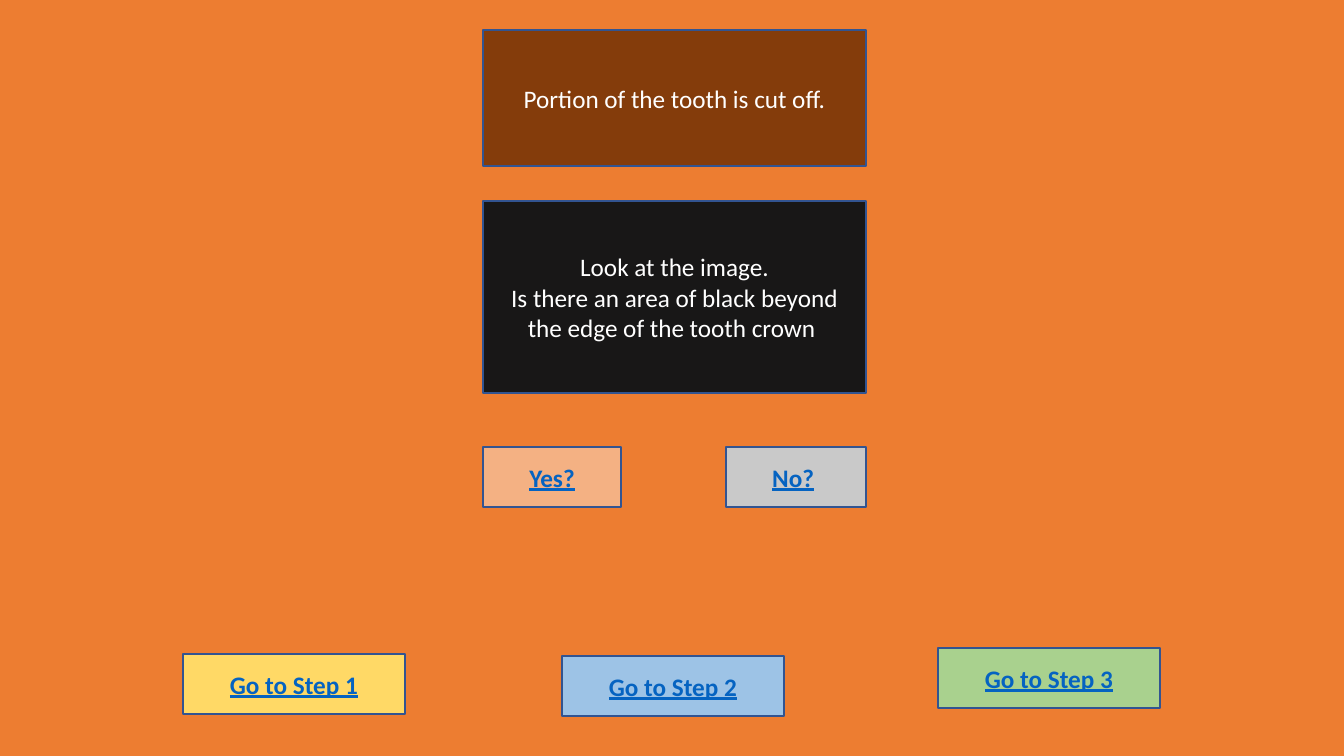
from pptx import Presentation
from pptx import util as u
from pptx.dml.color import RGBColor
from pptx.enum import shapes, text

COLORS = {
    "background": "ED7D31", "outline": "325491", "plain": "FFFFFF", "link": "0563C1",
    "brown": "843C0B", "black": "181717", "peach": "F4B183", "gray": "C9C9C9",
    "yellow": "FFD966", "blue": "9DC3E6", "green": "A9D18E",
}
STYLES = {
    "plain": {"name": "Calibri", "size": u.Pt(18), "bold": False, "underline": False},
    "link": {"name": "Calibri", "size": u.Pt(18), "bold": True, "underline": True},
}
PROCESS = shapes.MSO_SHAPE.FLOWCHART_PROCESS
RECTANGLE = shapes.MSO_SHAPE.RECTANGLE

COLUMN_LEFT, COLUMN_WIDTH = 483, 383
YES_WIDTH, NO_WIDTH = 138, 140
ANSWER_TOP, BUTTON_HEIGHT = 447, 60
STEP_WIDTH = 222

QUESTIONS = [
    (30, 136, "brown", ["Portion of the tooth is cut off."]),
    (201, 192, "black", ["Look at the image.",
                         "Is there an area of black beyond the edge of the tooth crown "]),
]
ANSWERS = [
    (COLUMN_LEFT, YES_WIDTH, "peach", [("Yes?", "link")]),
    (COLUMN_LEFT + COLUMN_WIDTH - NO_WIDTH, NO_WIDTH, "gray",
     [("No?", "link"), (" ", "plain")]),
]
STEPS = [(183, 654, "yellow"), (562, 656, "blue"), (938, 648, "green")]

SCALE = u.Inches(1) / 100.8


def px(length):
    return u.Emu(round(length * SCALE))


def color(name):
    return RGBColor.from_string(COLORS[name])


def add_box(page, kind, bounds, fill, paragraphs):
    box = page.shapes.add_shape(kind, *map(px, bounds))
    box.shadow.inherit = False
    box.fill.solid()
    box.fill.fore_color.rgb = color(fill)
    box.line.color.rgb = color("outline")
    box.line.width = u.Pt(1)
    frame = box.text_frame
    frame.word_wrap = True
    frame.vertical_anchor = text.MSO_ANCHOR.MIDDLE
    for index, spans in enumerate(paragraphs):
        para = frame.add_paragraph() if index else frame.paragraphs[0]
        para.alignment = text.PP_ALIGN.CENTER
        for words, style in spans:
            span = para.add_run()
            span.text = words
            for key, value in STYLES[style].items():
                setattr(span.font, key, value)
            span.font.color.rgb = color(style)


def main():
    deck = Presentation()
    deck.slide_width, deck.slide_height = px(1344), px(756)
    page = deck.slides.add_slide(deck.slide_layouts[6])
    page.background.fill.solid()
    page.background.fill.fore_color.rgb = color("background")

    for top, height, fill, lines in QUESTIONS:
        add_box(page, PROCESS, (COLUMN_LEFT, top, COLUMN_WIDTH, height), fill,
                [[(line, "plain")] for line in lines])
    for left, width, fill, spans in ANSWERS:
        add_box(page, PROCESS, (left, ANSWER_TOP, width, BUTTON_HEIGHT), fill, [spans])
    for number, (left, top, fill) in enumerate(STEPS, 1):
        add_box(page, RECTANGLE, (left, top, STEP_WIDTH, BUTTON_HEIGHT), fill,
                [[(f"Go to Step {number}", "link")]])

    deck.save("out.pptx")


if __name__ == "__main__":
    main()
